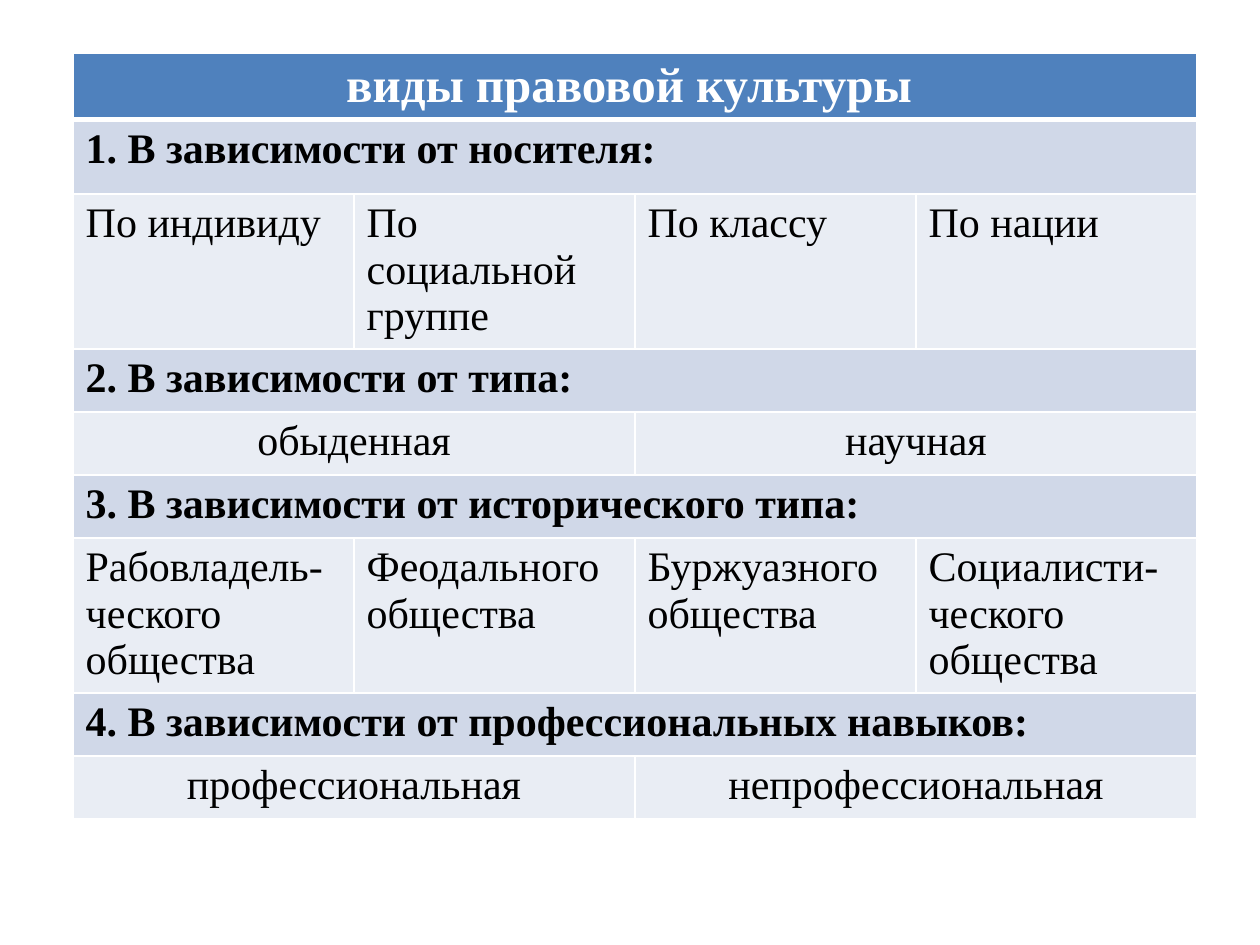
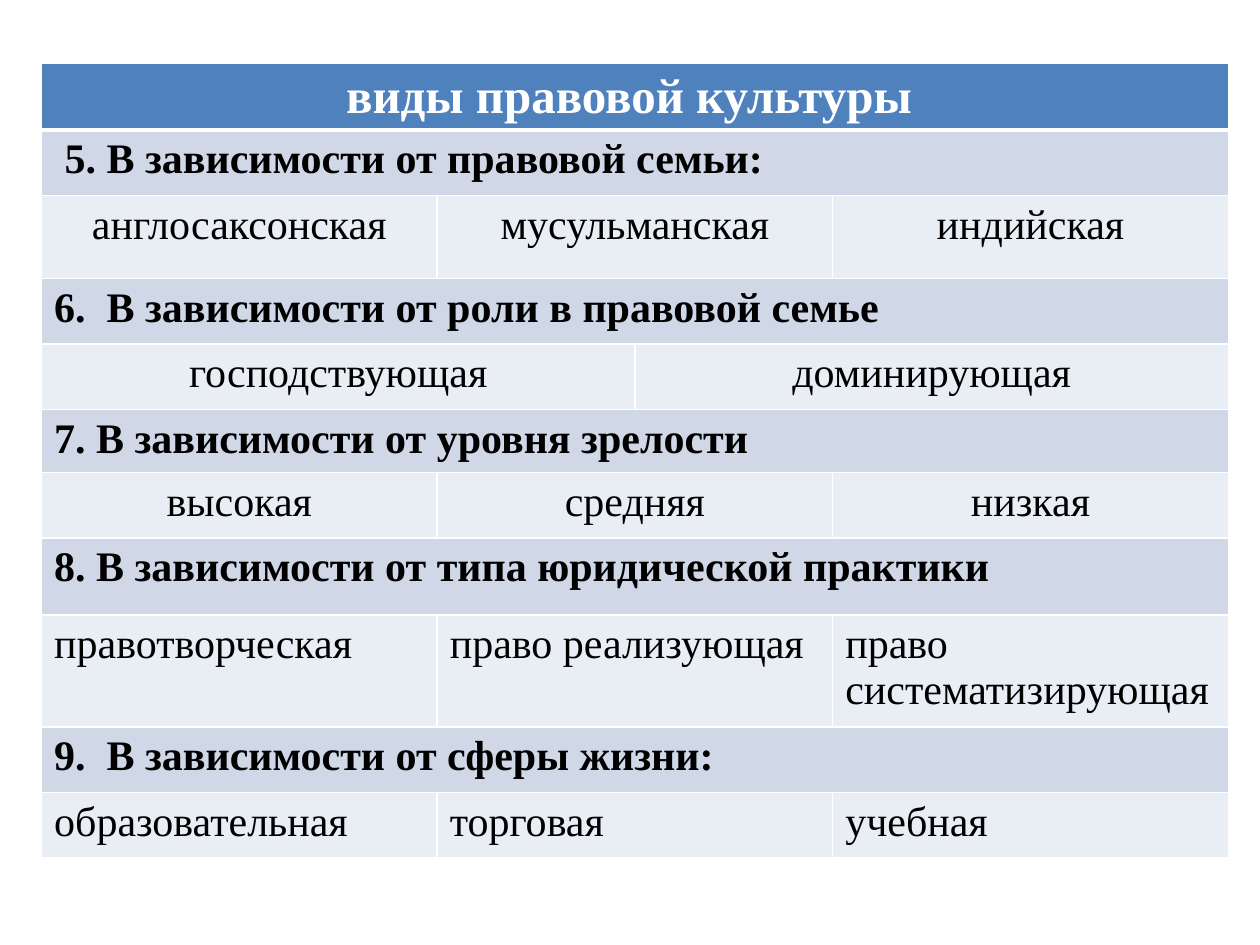
from lxml.etree import SubElement
from pptx import Presentation
from pptx.dml.color import RGBColor
from pptx.enum.text import PP_ALIGN
from pptx.oxml.ns import qn
from pptx.util import Inches, Pt

HEADER_BLUE = RGBColor(0x4F, 0x81, 0xBD)
BAND_BLUE = RGBColor(0xD0, 0xD8, 0xE8)
PALE_BLUE = RGBColor(0xE9, 0xED, 0xF4)
WHITE = RGBColor(0xFF, 0xFF, 0xFF)
BLACK = RGBColor(0x00, 0x00, 0x00)
FONT = "Times New Roman"
TITLE = "виды правовой культуры "
LEFT, CENTER = PP_ALIGN.LEFT, PP_ALIGN.CENTER

# Columns taken by each cell, by the number of cells in the row
SPANS = {1: [4], 2: [2, 2], 3: [1, 2, 1], 4: [1, 1, 1, 1]}

# Each group: heading, heading height, kinds, kinds height, alignment of kinds
CARRIER_GROUPS = [
    ("1. В зависимости от носителя:", 0.59,
     ["По индивиду", "По социальной группе", "По классу", "По нации"], 1.23, LEFT),
    ("2. В зависимости от типа:", 0.5, ["обыденная", "научная"], 0.5, CENTER),
    ("3. В зависимости от исторического типа:", 0.5,
     ["Рабовладель-ческого общества", "Феодального общества",
      "Буржуазного общества", "Социалисти-ческого общества"], 1.23, LEFT),
    ("4. В зависимости от профессиональных навыков:", 0.5,
     ["профессиональная", "непрофессиональная"], 0.5, CENTER),
]
FAMILY_GROUPS = [
    (" 5. В зависимости от правовой семьи:", 0.52,
     ["англосаксонская", "мусульманская", "индийская"], 0.66, CENTER),
    ("6.  В зависимости от роли в правовой семье", 0.52,
     ["господствующая", "доминирующая"], 0.52, CENTER),
    ("7. В зависимости от уровня зрелости", 0.5,
     ["высокая", "средняя", "низкая"], 0.52, CENTER),
    ("8. В зависимости от типа юридической практики", 0.61,
     ["правотворческая", "право реализующая", "право систематизирующая"], 0.89, LEFT),
    ("9.  В зависимости от сферы жизни:", 0.52,
     ["образовательная", "торговая", "учебная"], 0.52, LEFT),
]


def set_borders(cell, top=1, bottom=1):
    """Draw white borders with the given widths in points."""
    properties = cell._tc.get_or_add_tcPr()
    for side, width in (("L", 1), ("R", 1), ("T", top), ("B", bottom)):
        line = SubElement(properties, qn(f"a:ln{side}"), w=str(Pt(width)))
        fill = SubElement(line, qn("a:solidFill"))
        SubElement(fill, qn("a:srgbClr"), val=str(WHITE))


def fill_row(table, row, texts, fill, size=24, color=BLACK, bold=False, alignment=LEFT):
    # Colours and borders of the whole row
    for cell in table.rows[row].cells:
        set_borders(cell, top=3 if row == 1 else 1, bottom=3 if row == 0 else 1)
        cell.fill.solid()
        cell.fill.fore_color.rgb = fill

    # Merged cells and their text
    column = 0
    for text, span in zip(texts, SPANS[len(texts)]):
        cell = table.cell(row, column)
        if span > 1:
            cell.merge(table.cell(row, column + span - 1))
        cell.text = text
        paragraph = cell.text_frame.paragraphs[0]
        paragraph.alignment = alignment
        paragraph.font.name = FONT
        paragraph.font.size = Pt(size)
        paragraph.font.bold = bold
        paragraph.font.color.rgb = color
        column += span


def add_kinds_slide(presentation, box, column_widths, title_height, groups):
    slide = presentation.slides.add_slide(presentation.slide_layouts[6])
    heights = [title_height]
    for _, heading_height, _, kinds_height, _ in groups:
        heights += [heading_height, kinds_height]

    # Table grid
    left, top, width = box
    frame = slide.shapes.add_table(len(heights), len(column_widths), Inches(left),
                                   Inches(top), Inches(width), Inches(sum(heights)))
    table = frame.table
    for column, column_width in zip(table.columns, column_widths):
        column.width = Inches(column_width)
    for row, height in zip(table.rows, heights):
        row.height = Inches(height)

    # Title row, then a heading row and a row of kinds for each group
    fill_row(table, 0, [TITLE], HEADER_BLUE, 28, WHITE, True, CENTER)
    for index, (heading, _, kinds, _, alignment) in enumerate(groups):
        row = 1 + 2 * index
        fill_row(table, row, [heading], BAND_BLUE, bold=True)
        fill_row(table, row + 1, kinds, PALE_BLUE, alignment=alignment)


def main():
    presentation = Presentation()
    presentation.slide_width = Inches(10)
    presentation.slide_height = Inches(7.5)
    add_kinds_slide(presentation, (0.58, 0.42, 8.92), [2.23] * 4, 0.5, CARRIER_GROUPS)
    add_kinds_slide(presentation, (0.33, 0.5, 9.42), [3.14, 1.57, 1.57, 3.14], 0.52,
                    FAMILY_GROUPS)
    presentation.save("out.pptx")


if __name__ == "__main__":
    main()
